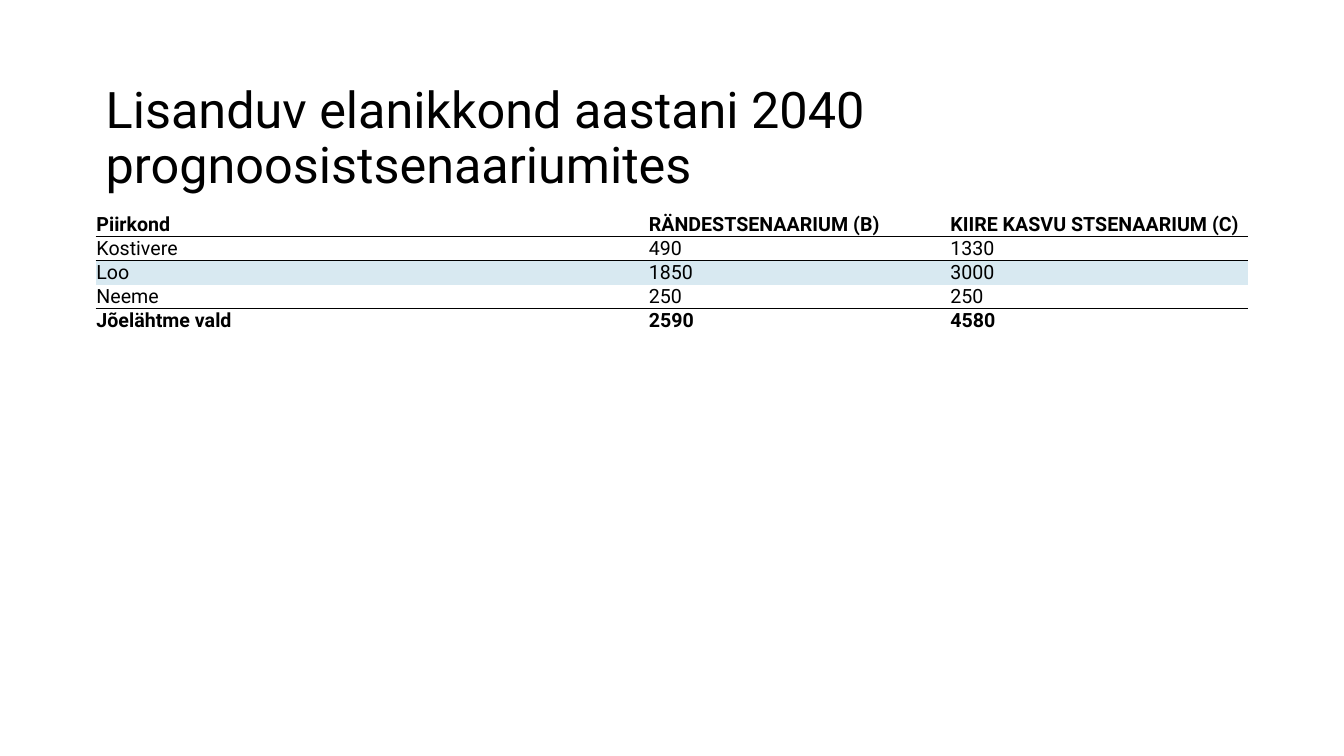
from pptx import Presentation
from pptx.dml.color import RGBColor
from pptx.enum.text import MSO_ANCHOR as Anchor, MSO_AUTO_SIZE as AutoSize, PP_ALIGN as Align
from pptx.oxml import parse_xml
from pptx.oxml.ns import nsdecls
from pptx.util import Cm, Pt

BLACK = RGBColor(0x00, 0x00, 0x00)
PALE_BLUE = RGBColor(0xD8, 0xE9, 0xF1)
FONT = "Roboto"
NO_STYLE = "{2D5ABB26-0587-4C30-8999-92F81FD0307C}"

ROWS = [
    ("Piirkond", "RÄNDESTSENAARIUM (B)", "KIIRE KASVU STSENAARIUM (C)"),
    ("Kostivere", "490", "1330"),
    ("Loo", "1850", "3000"),
    ("Neeme", "250", "250"),
    ("Jõelähtme vald", "2590", "4580"),
]
COLUMN_WIDTHS = [13.92, 7.6, 7.52]
ROW_HEIGHT = 0.6
HEADER, SHADED, TOTAL = 0, 2, len(ROWS) - 1
# Rules lie below the header and above the total
RULES = {HEADER: "lnB", HEADER + 1: "lnT", TOTAL - 1: "lnB", TOTAL: "lnT"}


def write(frame, text, size, bold=False, anchor=Anchor.BOTTOM, line_spacing=1.0):
    frame.word_wrap = True
    frame.vertical_anchor = anchor
    para = frame.paragraphs[0]
    para.alignment = Align.LEFT
    para.line_spacing = line_spacing
    span = para.add_run()
    span.text = text
    span.font.name = FONT
    span.font.size = Pt(size)
    span.font.bold = bold
    span.font.color.rgb = BLACK


def add_rule(cell, side):
    cell._tc.get_or_add_tcPr().insert(0, parse_xml(
        f'<a:{side} {nsdecls("a")} w="{Pt(0.5)}"><a:solidFill>'
        f'<a:srgbClr val="{BLACK}"/></a:solidFill></a:{side}>'))


deck = Presentation()
deck.slide_width, deck.slide_height = Cm(33.87), Cm(19.05)
page = deck.slides.add_slide(deck.slide_layouts[5])

# Title
title = page.shapes.title
title.left, title.top, title.width, title.height = Cm(2.41), Cm(1.68), Cm(29.03), Cm(3.68)
title.text_frame.auto_size = AutoSize.NONE
write(title.text_frame, "Lisanduv elanikkond aastani 2040 prognoosistsenaariumites",
      36, anchor=Anchor.MIDDLE, line_spacing=0.9)

# Population table
frame = page.shapes.add_table(len(ROWS), len(COLUMN_WIDTHS), Cm(2.41), Cm(5.36),
                              Cm(sum(COLUMN_WIDTHS)), Cm(ROW_HEIGHT * len(ROWS)))
table = frame.table
table.first_row = table.horz_banding = False
table._tbl.tblPr[0].text = NO_STYLE
for column, width in zip(table.columns, COLUMN_WIDTHS):
    column.width = Cm(width)

for row_index, values in enumerate(ROWS):
    table.rows[row_index].height = Cm(ROW_HEIGHT)
    for column_index, value in enumerate(values):
        cell = table.cell(row_index, column_index)
        cell.margin_left = cell.margin_right = cell.margin_top = Cm(0.02)
        cell.margin_bottom = 0
        cell.vertical_anchor = Anchor.BOTTOM
        write(cell.text_frame, value, 14, bold=row_index in (HEADER, TOTAL))
        if row_index == SHADED:
            cell.fill.solid()
            cell.fill.fore_color.rgb = PALE_BLUE
        else:
            cell.fill.background()
        if row_index in RULES:
            add_rule(cell, RULES[row_index])

deck.save("out.pptx")
